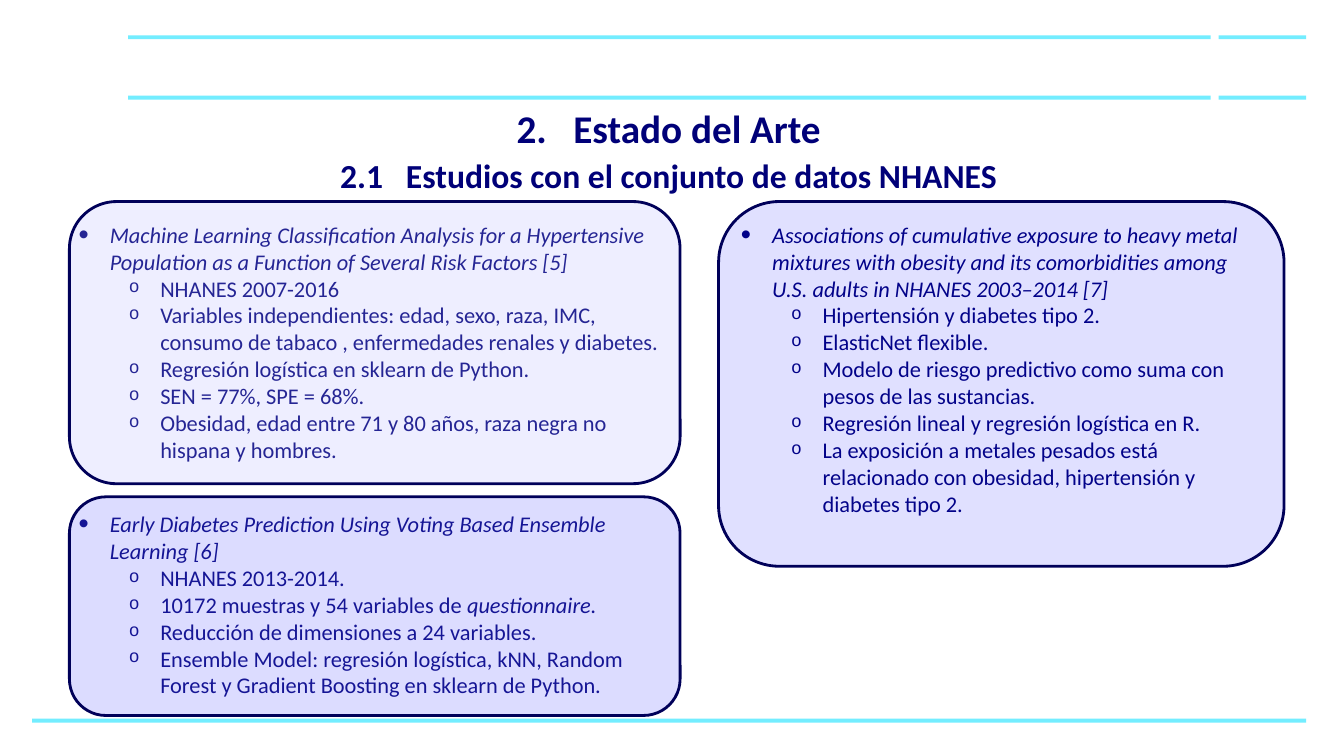
from dataclasses import dataclass

import pptx
import pptx.dml.color
import pptx.enum.shapes
import pptx.enum.text
import pptx.oxml.ns
import pptx.util
from lxml import etree
from pptx.util import Cm


@dataclass
class Theme:
    font: str = "Calibri"
    ink: str = "000078"
    bar: str = "73EDFF"
    outline: str = "000059"
    title_size: int = 28
    subtitle_size: int = 24
    body_size: int = 16
    study_gap: int = 34


theme = Theme()
rgb = pptx.dml.color.RGBColor.from_string
qn = pptx.oxml.ns.qn


def add_text_box(left, top, width, height, inset_top=0.13):
    frame = slide.shapes.add_textbox(Cm(left), Cm(top), Cm(width), Cm(height)).text_frame
    settings = {"word_wrap": True, "margin_top": Cm(inset_top),
                "vertical_anchor": pptx.enum.text.MSO_ANCHOR.TOP}
    for name, value in settings.items():
        setattr(frame, name, value)
    return frame


def add_run(paragraph, text, size, **styles):
    run = paragraph.add_run()
    run.text = text
    settings = {"name": theme.font, "size": pptx.util.Pt(size), **styles}
    for name, value in settings.items():
        setattr(run.font, name, value)
    run.font.color.rgb = rgb(theme.ink)
    return run


presentation = pptx.Presentation()
presentation.slide_width, presentation.slide_height = Cm(33.87), Cm(19.05)
slide = presentation.slides.add_slide(presentation.slide_layouts[6])

# Header and footer bars
bars = [(left, top, width) for top in (0.89, 2.41)
        for left, width in ((3.23, 27.28), (30.71, 2.21))]
bars.append((0.81, 18.11, 32.11))
for left, top, width in bars:
    shape = slide.shapes.add_shape(pptx.enum.shapes.MSO_SHAPE.RECTANGLE,
                                   Cm(left), Cm(top), Cm(width), Cm(0.1))
    shape.shadow.inherit = False
    shape.fill.solid()
    shape.fill.fore_color.rgb = rgb(theme.bar)
    shape.line.fill.background()

# Numbered title
paragraph = add_text_box(0.76, 2.39, 32.18, 1.55, 0.25).paragraphs[0]
paragraph.alignment = pptx.enum.text.PP_ALIGN.CENTER
properties = paragraph._p.get_or_add_pPr()
properties.set("marL", str(Cm(1.43)))
properties.set("indent", str(Cm(-1.43)))
etree.SubElement(properties, qn("a:buFont"), typeface=theme.font)
etree.SubElement(properties, qn("a:buAutoNum"), type="arabicPeriod", startAt="2")
add_run(paragraph, "Estado del Arte", theme.title_size, bold=True)

# Subtitle: the space after the number is widened by character spacing
paragraph = add_text_box(0.76, 3.78, 32.18, 1.27).paragraphs[0]
paragraph.alignment = pptx.enum.text.PP_ALIGN.CENTER
for text, spacing in (("2.1", 0), (" ", 1080),
                      ("Estudios con el conjunto de datos NHANES", 0)):
    run = add_run(paragraph, text, theme.subtitle_size, bold=True)
    if spacing:
        run.font._element.set("spc", str(spacing))

# Studies: title and findings, with asterisks around words in italics
left_studies = [
    ("Machine Learning Classification Analysis for a Hypertensive Population "
     "as a Function of Several Risk Factors [5]",
     ["NHANES 2007-2016",
      "Variables independientes: edad, sexo, raza, IMC, consumo de tabaco , "
      "enfermedades renales y diabetes.",
      "Regresión logística en sklearn de Python.",
      "SEN = 77%, SPE = 68%.",
      "Obesidad, edad entre 71 y 80 años, raza negra no hispana y hombres."]),
    ("Early Diabetes Prediction Using Voting Based Ensemble Learning [6]",
     ["NHANES 2013-2014.",
      "10172 muestras y 54 variables de *questionnaire.*",
      "Reducción de dimensiones a 24 variables.",
      "Ensemble Model: regresión logística, kNN, Random Forest y Gradient "
      "Boosting en sklearn de Python."]),
]
right_studies = [
    ("Associations of cumulative exposure to heavy metal mixtures with obesity "
     "and its comorbidities among U.S. adults in NHANES 2003–2014 [7]",
     ["Hipertensión y diabetes tipo 2.",
      "ElasticNet flexible.",
      "Modelo de riesgo predictivo como suma con pesos de las sustancias.",
      "Regresión lineal y regresión logística en R.",
      "La exposición a metales pesados está relacionado con obesidad, "
      "hipertensión y diabetes tipo 2."]),
]
# Per level: left margin, bullet size, bullet font, bullet
levels = {1: (2.06, "130000", "Arial", "•"),
          2: (3.33, "80000", "Courier New", "o")}

for left, width, height, studies in ((0.46, 16.69, 12.7, left_studies),
                                     (17.15, 14.73, 7.77, right_studies)):
    frame = add_text_box(left, 5.44, width, height)
    lines = [(level, text) for study, findings in studies
             for level, text in [(1, f"*{study}*")] + [(2, item) for item in findings]]
    for index, (level, text) in enumerate(lines):
        paragraph = frame.add_paragraph() if index else frame.paragraphs[0]
        paragraph.level = level
        margin, bullet_size, bullet_font, bullet = levels[level]
        properties = paragraph._p.get_or_add_pPr()
        properties.set("marL", str(Cm(margin)))
        properties.set("indent", str(Cm(-0.79)))
        etree.SubElement(properties, qn("a:buSzPct"), val=bullet_size)
        etree.SubElement(properties, qn("a:buFont"), typeface=bullet_font)
        etree.SubElement(properties, qn("a:buChar"), char=bullet)
        if level == 1 and index:
            paragraph.space_before = pptx.util.Pt(theme.study_gap)
        for part, words in enumerate(text.split("*")):
            if words:
                add_run(paragraph, words, theme.body_size, italic=part % 2 == 1)

# Translucent rounded panels over the studies: box, tint, opacity in percent
panels = [((1.75, 5.08, 15.39, 7.11), "B1B1FF", 21),
          ((1.75, 12.52, 15.39, 5.51), "6363FF", 22),
          ((18.11, 5.08, 14.25, 9.19), "1515FF", 13)]
for box, tint, opacity in panels:
    shape = slide.shapes.add_shape(pptx.enum.shapes.MSO_SHAPE.ROUNDED_RECTANGLE,
                                   *(Cm(length) for length in box))
    shape.shadow.inherit = False
    shape.fill.solid()
    shape.fill.fore_color.rgb = rgb(tint)
    color = shape._element.spPr.find(qn("a:solidFill")).find(qn("a:srgbClr"))
    etree.SubElement(color, qn("a:alpha"), val=str(opacity * 1000))
    shape.line.color.rgb = rgb(theme.outline)
    shape.line.width = pptx.util.Pt(2)

presentation.save("out.pptx")
